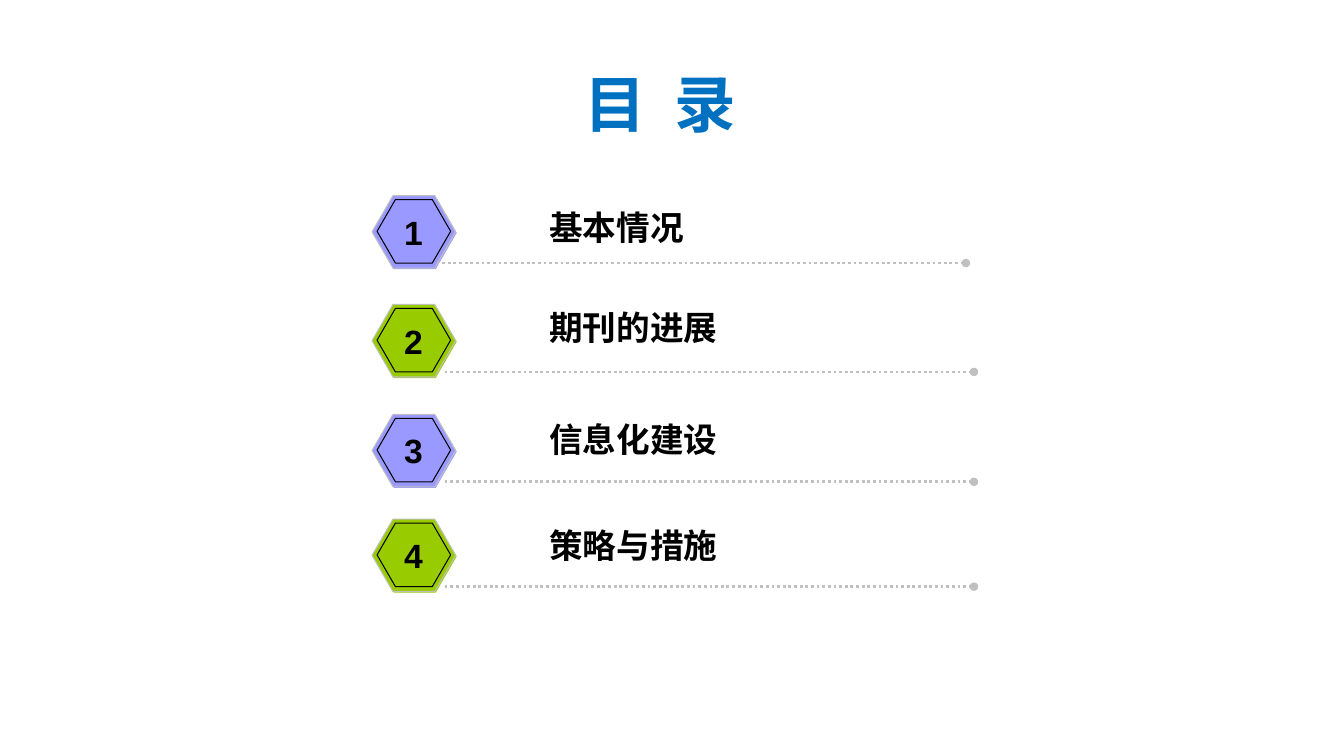
from lxml import etree
from pptx import Presentation, util as u
from pptx.dml.color import RGBColor
from pptx.enum import dml, shapes, text
from pptx.oxml import parse_xml
from pptx.oxml.ns import nsdecls, qn

PX = u.Inches(1) // 100
BLUE = RGBColor(0x00, 0x70, 0xC0)
PURPLE = RGBColor(0x99, 0x99, 0xFF)
GREEN = RGBColor(0x99, 0xCC, 0x00)
GREY = RGBColor(0xC0, 0xC0, 0xC0)
BLACK = RGBColor(0, 0, 0)

LEFT = 369
ENTRIES = [
    ("基本情况", 194, 6, 64, 331),
    ("期刊的进展", 302, -2, 72, 362),
    ("信息化建设", 411, 0, 72, 362),
    ("策略与措施", 515, 1, 72, 291),
]
TITLE_SHADOW = (
    f'<a:effectLst {nsdecls("a")}><a:outerShdw dist="38100" dir="2700000" algn="tl">'
    '<a:srgbClr val="999999"/></a:outerShdw></a:effectLst>'
)


def px(*lengths):
    return [length * PX for length in lengths]


def add_title(slide, box, wording):
    frame = slide.shapes.add_textbox(*px(*box)).text_frame
    frame.word_wrap = True
    frame.vertical_anchor = text.MSO_ANCHOR.MIDDLE
    paragraph = frame.paragraphs[0]
    paragraph.alignment = text.PP_ALIGN.CENTER
    run = paragraph.add_run()
    run.text = wording
    run.font.size = u.Pt(44)
    run.font.bold = True
    run.font.name = "Noto Sans CJK SC"
    run.font.color.rgb = BLUE
    properties = run._r.get_or_add_rPr()
    properties.find(qn("a:solidFill")).addnext(parse_xml(TITLE_SHADOW))
    east_asian = etree.Element(qn("a:ea"), typeface="Noto Sans CJK SC")
    properties.find(qn("a:latin")).addnext(east_asian)


def add_text(slide, box, wording, wrap=True):
    frame = slide.shapes.add_textbox(*px(*box)).text_frame
    frame.word_wrap = wrap
    frame.auto_size = text.MSO_AUTO_SIZE.SHAPE_TO_FIT_TEXT
    paragraph = frame.paragraphs[0]
    paragraph.text = wording
    paragraph.font.size = u.Pt(24)
    paragraph.font.bold = True
    paragraph.font.name = "Arial"
    paragraph.font.color.rgb = BLACK


def add_badge(slide, left, top, color):
    group = slide.shapes.add_group_shape()
    layers = [(1, 1, 83, 72, None), (0, 0, 83, 72, GREY), (5, 4, 73, 63, BLACK)]
    for dx, dy, width, height, outline in layers:
        hexagon = group.shapes.add_shape(
            shapes.MSO_SHAPE.HEXAGON, *px(left + dx, top + dy, width, height))
        hexagon.shadow.inherit = False
        hexagon.adjustments[0] = 0.289
        hexagon.adjustments[1] = 1.155
        hexagon.fill.solid()
        hexagon.fill.fore_color.rgb = color
        if outline is None:
            hexagon.line.fill.background()
        else:
            hexagon.line.color.rgb = outline
            hexagon.line.width = u.Pt(0.75)


def add_dotted_line(slide, left, top, width):
    connector = slide.shapes.add_connector(
        shapes.MSO_CONNECTOR.STRAIGHT, *px(left, top, left + width, top))
    connector.line.color.rgb = GREY
    connector.line.width = u.Pt(2)
    connector.line.dash_style = dml.MSO_LINE.ROUND_DOT
    etree.SubElement(connector.line._get_or_add_ln(), qn("a:tailEnd"), type="oval")
    etree.SubElement(connector._element.spPr, qn("a:effectLst"))


def add_entry(slide, left, top, number, label, label_shift, line_shift, label_width):
    add_badge(slide, left, top, PURPLE if number % 2 else GREEN)
    add_dotted_line(slide, left + line_shift, top + 67, 525)
    add_text(slide, (left + 22, top + 11, 39, 50), str(number), wrap=False)
    add_text(slide, (left + 166, top + label_shift, label_width, 50), label)


def main():
    presentation = Presentation()
    presentation.slide_width, presentation.slide_height = px(1333, 750)
    slide = presentation.slides.add_slide(presentation.slide_layouts[6])
    add_title(slide, (226, 60, 858, 85), "目  录")
    for number, (label, top, label_shift, line_shift, width) in enumerate(ENTRIES, 1):
        add_entry(slide, LEFT, top, number, label, label_shift, line_shift, width)
    presentation.save("out.pptx")


if __name__ == "__main__":
    main()
